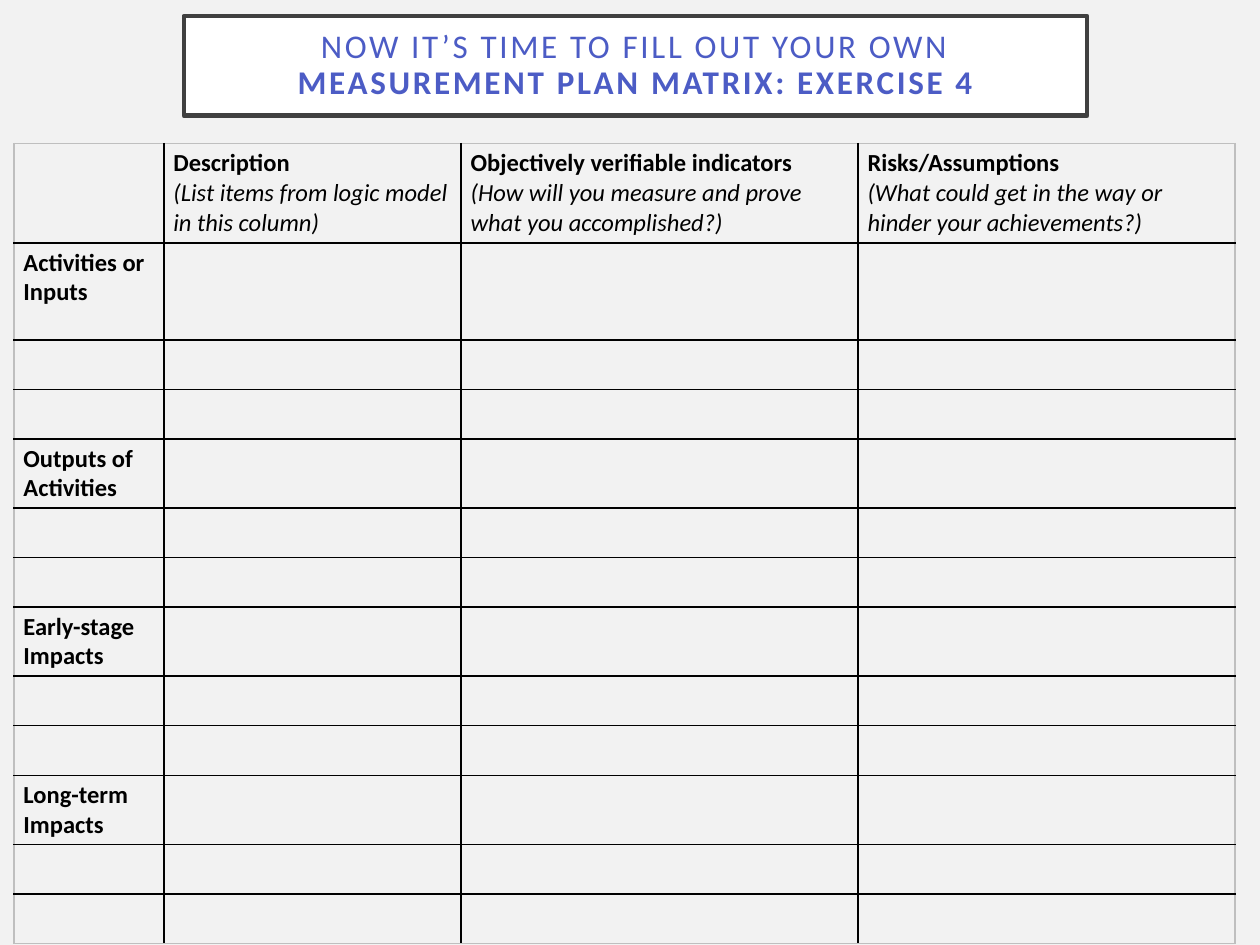
from lxml import etree
from pptx import Presentation
from pptx.dml.color import RGBColor
from pptx.enum import text
from pptx.oxml import ns
from pptx.util import Pt

PAGE_GREY = RGBColor(0xF2, 0xF2, 0xF2)
WHITE = RGBColor(0xFF, 0xFF, 0xFF)
FRAME = RGBColor(0x40, 0x40, 0x40)
BLUE = RGBColor(0x4C, 0x5C, 0xC5)
BLACK = RGBColor(0, 0, 0)
EDGE_GREY = RGBColor(0xBF, 0xBF, 0xBF)

HEADERS = [
    ("Description", "(List items from logic model in this column)"),
    ("Objectively verifiable indicators",
     "(How will you measure and prove what you accomplished?)"),
    ("Risks/Assumptions",
     "(What could get in the way or hinder your achievements?)"),
]
STAGES = ["Activities or Inputs", "Outputs of Activities",
          "Early-stage Impacts", "Long-term Impacts"]
ROWS_PER_STAGE = 3
COLUMN_WIDTHS = [85.7, 169.9, 226.8, 215.3]
ROW_HEIGHTS = [56.9, 55.4] + [28.3] * (len(STAGES) * ROWS_PER_STAGE - 1)


def format_span(span, size, color, bold=False, italic=False):
    span.font.name = "Calibri"
    span.font.size = Pt(size)
    span.font.color.rgb = color
    span.font.bold = bold
    span.font.italic = italic


def add_border(cell, side, color):
    properties = cell._tc.get_or_add_tcPr()
    line = etree.SubElement(properties, ns.qn(f"a:ln{side}"), w=str(Pt(1)))
    fill = etree.SubElement(line, ns.qn("a:solidFill"))
    etree.SubElement(fill, ns.qn("a:srgbClr"), val=str(color))


deck = Presentation()
deck.slide_width, deck.slide_height = Pt(720), Pt(540)
page = deck.slides.add_slide(deck.slide_layouts[5])
page.background.fill.solid()
page.background.fill.fore_color.rgb = PAGE_GREY

# Framed title
title = page.shapes.title
title.left, title.top, title.width, title.height = Pt(105), Pt(9.2), Pt(516.3), Pt(56.9)
title.fill.solid()
title.fill.fore_color.rgb = WHITE
title.line.color.rgb = FRAME
title.line.width = Pt(2.5)
frame = title.text_frame
frame.word_wrap = True
frame.auto_size = text.MSO_AUTO_SIZE.NONE
frame.vertical_anchor = text.MSO_ANCHOR.MIDDLE
frame.margin_left = frame.margin_right = Pt(14.4)
frame.margin_top = frame.margin_bottom = Pt(14.4)
para = frame.paragraphs[0]
para.alignment = text.PP_ALIGN.CENTER
para.line_spacing = 0.9
for words, bold in [("NOW IT’S TIME TO FILL OUT YOUR OWN ", False),
                    ("MEASUREMENT PLAN MATRIX: EXERCISE 4", True)]:
    span = para.add_run()
    span.text = words
    format_span(span, 18.9, BLUE, bold)
    span.font._element.set("spc", "150")

# Matrix grid
table = page.shapes.add_table(len(ROW_HEIGHTS), len(COLUMN_WIDTHS), Pt(8), Pt(82),
                              Pt(sum(COLUMN_WIDTHS)), Pt(sum(ROW_HEIGHTS))).table
table.first_row = table.horz_banding = False
for column, width in zip(table.columns, COLUMN_WIDTHS):
    column.width = Pt(width)
for row, height in zip(table.rows, ROW_HEIGHTS):
    row.height = Pt(height)

# Column headings and stage labels
for number, heading in enumerate(HEADERS, start=1):
    table.cell(0, number).text_frame.text = "\n".join(heading)
for number, stage in enumerate(STAGES):
    table.cell(1 + number * ROWS_PER_STAGE, 0).text_frame.text = stage

# Cell borders and text format: grey outer edge, black inner lines
last_row, last_column = len(ROW_HEIGHTS) - 1, len(COLUMN_WIDTHS) - 1
for r in range(last_row + 1):
    for c in range(last_column + 1):
        cell = table.cell(r, c)
        outer_sides = {"L": c == 0, "R": c == last_column, "T": r == 0, "B": r == last_row}
        for side, is_outer in outer_sides.items():
            add_border(cell, side, EDGE_GREY if is_outer else BLACK)
        cell.fill.background()
        cell.margin_left = cell.margin_right = Pt(5.4)
        cell.margin_top = cell.margin_bottom = Pt(2.7)
        for index, para in enumerate(cell.text_frame.paragraphs):
            for span in para.runs:
                format_span(span, 14, BLACK, bold=index == 0, italic=index == 1)
            if not para.runs:
                # Keeps empty rows at their set height
                etree.SubElement(para._p, ns.qn("a:endParaRPr"), sz="1400")

deck.save("out.pptx")
